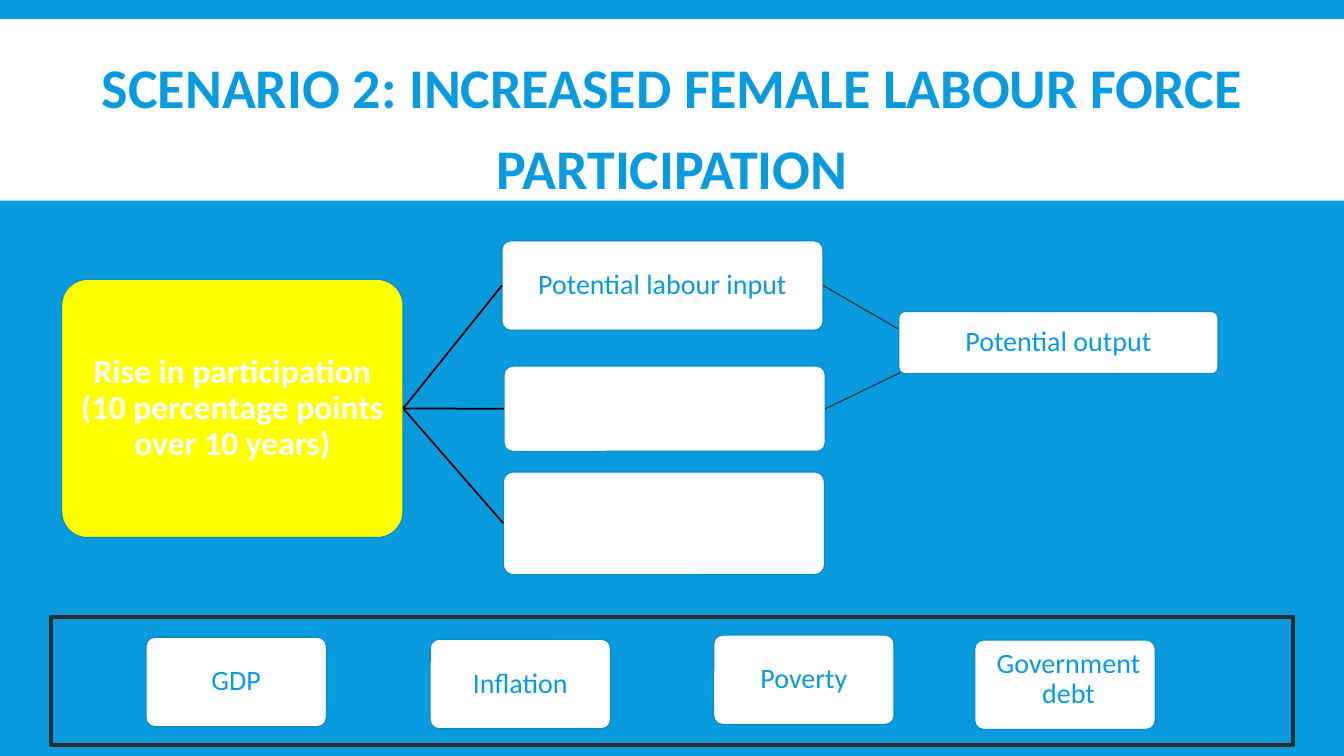
from dataclasses import dataclass
from pptx import Presentation
from pptx.dml.color import RGBColor as RGB
from pptx.enum.shapes import MSO_CONNECTOR as Link, MSO_SHAPE as Form
from pptx.enum.text import MSO_ANCHOR as Anchor, PP_ALIGN as Align
from pptx.oxml.xmlchemy import OxmlElement as Node
from pptx.util import Pt


@dataclass(frozen=True)
class Theme:
    """Colours, font and type sizes of the slide."""
    blue: RGB = RGB(0x09, 0x9B, 0xDD)
    edge: RGB = RGB(0x08, 0x8D, 0xC9)
    white: RGB = RGB(0xFF, 0xFF, 0xFF)
    yellow: RGB = RGB(0xFF, 0xFF, 0x00)
    black: RGB = RGB(0, 0, 0)
    dark: RGB = RGB(0x2C, 0x2C, 0x2C)
    font: str = "Calibri"
    title: int = 40
    cause: int = 24
    label: int = 20


theme = Theme()


def write(shape, words, size, color, bold=False, space=0.9, pads=(1, 1, 1, 1),
          anchor=Anchor.MIDDLE):
    """Put one centred run of text into a shape."""
    frame = shape.text_frame
    frame.word_wrap = True
    frame.vertical_anchor = anchor
    (frame.margin_left, frame.margin_top,
     frame.margin_right, frame.margin_bottom) = map(Pt, pads)
    para = frame.paragraphs[0]
    para.alignment = Align.CENTER
    para.line_spacing = space
    run = para.add_run()
    run.text = words
    run.font.name = theme.font
    run.font.size = Pt(size)
    run.font.bold = bold
    run.font.color.rgb = color


def block(slide, form, box, fill=None, edge=None, width=1):
    """Draw a flat shape with an optional fill and edge."""
    shape = slide.shapes.add_shape(form, *map(Pt, box))
    shape.shadow.inherit = False
    if form == Form.ROUNDED_RECTANGLE:
        shape.adjustments[0] = 0.1
    if fill is None:
        shape.fill.background()
    else:
        shape.fill.solid()
        shape.fill.fore_color.rgb = fill
    if edge is None:
        shape.line.fill.background()
    else:
        shape.line.color.rgb = edge
        shape.line.width = Pt(width)
    return shape


def card(slide, box, words="", pads=(1, 1, 1, 1)):
    """Draw a white rounded card with a blue label."""
    shape = block(slide, Form.ROUNDED_RECTANGLE, box, theme.white, theme.edge)
    if words:
        write(shape, words, theme.label, theme.blue, pads=pads)
    return shape


def join(slide, start, end, color, width):
    """Link the right side of a shape to another shape's left side or a point."""
    point = end if isinstance(end, tuple) else (0, 0)
    line = slide.shapes.add_connector(Link.STRAIGHT, 0, 0, *map(Pt, point))
    line.begin_connect(start, 3)
    if not isinstance(end, tuple):
        line.end_connect(end, 1)
    line.line.color.rgb = color
    line.line.width = Pt(width)
    line._element.spPr.append(Node("a:effectLst"))


def header(slide, box):
    """Draw the white band and the title on its lower edge."""
    block(slide, Form.RECTANGLE, box, theme.white)
    text = slide.shapes.add_textbox(*map(Pt, box))
    write(text, "SCENARIO 2: INCREASED FEMALE LABOUR FORCE PARTICIPATION",
          theme.title, theme.blue, True, 1.2, (7, 0, 7, 0), Anchor.BOTTOM)


def flow(slide, box):
    """Draw the path from the rise in participation to potential output."""
    left, top, wide, _ = box
    cause = block(slide, Form.ROUNDED_RECTANGLE,
                  (left, top + 27.5, 244, 184.5), theme.yellow, theme.edge)
    write(cause, "Rise in participation (10 percentage points over 10 years)",
          theme.cause, theme.white, True, pads=(6.5,) * 4)
    parts = [(314.5, 0, 64, "Potential labour input"),
             (316, 89.5, 61, ""), (315.5, 165, 73.5, "")]
    cards = [card(slide, (left + x, top + y, 229.5, high), words)
             for x, y, high, words in parts]
    for part in cards:
        join(slide, cause, part, theme.black, 1.25)
    for part, y in zip(cards, (73, 86.5)):
        join(slide, part, (left + 615, top + y), theme.dark, 0.75)
    card(slide, (left + wide - 228, top + 50.5, 228, 44.5), "Potential output")


def panel(slide, box):
    """Draw the framed row of outcomes."""
    left, top = box[:2]
    plain = (1, 1, 1, 1)
    for x, y, words, pads in [(67.5, 14.5, "GDP", plain),
                              (270.5, 16, "Inflation", plain),
                              (473, 13, "Poverty", plain),
                              (659.5, 16.5, "Government debt", (6, 1, 1, 9))]:
        card(slide, (left + x, top + y, 129, 64), words, pads)
    block(slide, Form.RECTANGLE, box, edge=theme.dark, width=3)


def main():
    """Build and save the slide."""
    deck = Presentation()
    deck.slide_width, deck.slide_height = Pt(960), Pt(540)
    slide = deck.slides.add_slide(deck.slide_layouts[6])
    back = slide.background.fill
    back.solid()
    back.fore_color.rgb = theme.blue
    header(slide, (0, 13.7, 960, 129.6))
    flow(slide, (44, 172, 826, 238.5))
    panel(slide, (36.7, 440.6, 887, 91.4))
    deck.save("out.pptx")


if __name__ == "__main__":
    main()
